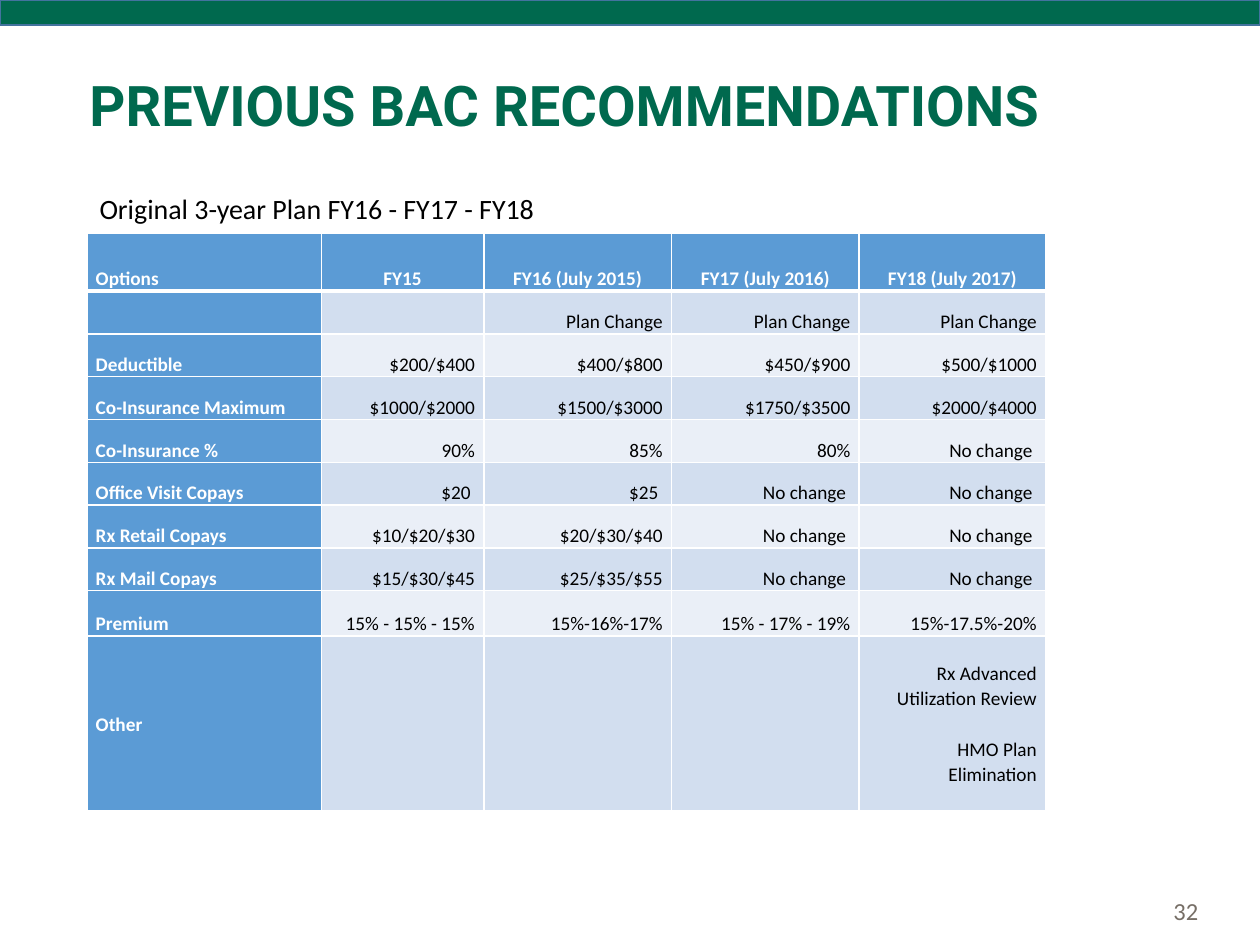
from typing import NamedTuple

from pptx import Presentation
from pptx import util as u
from pptx.dml.color import RGBColor
from pptx.enum import shapes, text
from pptx.oxml import ns, xmlchemy

GREEN = RGBColor(0x00, 0x69, 0x4E)
OUTLINE = RGBColor(0x43, 0x73, 0x9E)
BLUE = RGBColor(0x5B, 0x9B, 0xD5)
BANDS = (RGBColor(0xD2, 0xDE, 0xEF), RGBColor(0xEA, 0xEF, 0xF7))
WHITE = RGBColor(0xFF, 0xFF, 0xFF)
BLACK = RGBColor(0, 0, 0)
GREY = RGBColor(0x77, 0x6F, 0x67)

LEFT, CENTER, RIGHT = text.PP_ALIGN.LEFT, text.PP_ALIGN.CENTER, text.PP_ALIGN.RIGHT
BOTTOM, MIDDLE, TOP = (text.MSO_ANCHOR.BOTTOM, text.MSO_ANCHOR.MIDDLE,
                       text.MSO_ANCHOR.TOP)


class PlanRow(NamedTuple):
    label: str
    values: tuple
    height: float = 0.34
    anchor: text.MSO_ANCHOR = BOTTOM


HEADER = PlanRow("Options", ("FY15", "FY16 (July 2015)", "FY17 (July 2016)",
                             "FY18 (July 2017)"), 0.46)
PLAN_ROWS = (
    PlanRow("", ("", "Plan Change", "Plan Change", "Plan Change")),
    PlanRow("Deductible", ("$200/$400", "$400/$800", "$450/$900", "$500/$1000")),
    PlanRow("Co-Insurance Maximum",
            ("$1000/$2000", "$1500/$3000", "$1750/$3500", "$2000/$4000")),
    PlanRow("Co-Insurance %", ("90%", "85%", "80%", "No change ")),
    PlanRow("Office Visit Copays", ("$20 ", "$25 ", " No change ", "No change ")),
    PlanRow("Rx Retail Copays",
            ("$10/$20/$30", "$20/$30/$40", " No change ", " No change ")),
    PlanRow("Rx Mail Copays",
            ("$15/$30/$45", "$25/$35/$55", "No change ", " No change ")),
    PlanRow("Premium", ("15% - 15% - 15%", "15%-16%-17%", "15% - 17% - 19%",
                        "15%-17.5%-20%"), 0.36),
    PlanRow("Other", ("", "", "",
                      "Rx Advanced Utilization Review\nHMO Plan Elimination"),
            1.39, MIDDLE),
)
COLUMN_WIDTHS = (1.86, 1.29, 1.49, 1.49, 1.48)


def write(frame, content: str, *, size: float, color: RGBColor,
          font: str = "Calibri", bold: bool = False, align=LEFT,
          spacing: float = 1.0, gap: float = 0) -> None:
    """Fill a text frame, one paragraph per line, with a gap between them."""
    for index, line in enumerate(content.split("\n")):
        para = frame.add_paragraph() if index else frame.paragraphs[0]
        para.alignment = align
        para.line_spacing = spacing
        para.space_before = u.Pt(gap if index else 0)
        span = para.add_run()
        span.text = line
        span.font.name, span.font.size = font, u.Pt(size)
        span.font.bold, span.font.color.rgb = bold, color


def place(shape, left: float, top: float, width: float, height: float, anchor):
    """Position a text shape and return its frame."""
    shape.left, shape.top = u.Inches(left), u.Inches(top)
    shape.width, shape.height = u.Inches(width), u.Inches(height)
    frame = shape.text_frame
    frame.word_wrap = True
    frame.auto_size = text.MSO_AUTO_SIZE.NONE
    frame.vertical_anchor = anchor
    return frame


def add_borders(cell, top: float, bottom: float) -> None:
    properties = cell._tc.get_or_add_tcPr()
    for side, width in (("L", 1), ("R", 1), ("T", top), ("B", bottom)):
        line = xmlchemy.OxmlElement(f"a:ln{side}")
        line.set("w", str(u.Pt(width)))
        fill = xmlchemy.OxmlElement("a:solidFill")
        color = xmlchemy.OxmlElement("a:srgbClr")
        color.set("val", str(WHITE))
        fill.append(color)
        line.append(fill)
        properties.append(line)


def add_plan_table(page) -> None:
    rows = (HEADER,) + PLAN_ROWS
    table = page.shapes.add_table(
        len(rows), len(COLUMN_WIDTHS), u.Inches(0.69), u.Inches(1.85),
        u.Inches(sum(COLUMN_WIDTHS)), u.Inches(sum(r.height for r in rows))).table
    for column, width in zip(table.columns, COLUMN_WIDTHS):
        column.width = u.Inches(width)
    for number, row in enumerate(rows):
        table.rows[number].height = u.Inches(row.height)
        for position, content in enumerate((row.label,) + row.values):
            cell = table.cell(number, position)
            heading = number == 0 or position == 0
            add_borders(cell, 3 if number == 1 else 1, 3 if number == 0 else 1)
            cell.fill.solid()
            cell.fill.fore_color.rgb = BLUE if heading else BANDS[(number - 1) % 2]
            cell.margin_left = cell.margin_right = u.Inches(0.07)
            cell.margin_top = cell.margin_bottom = 0
            cell.vertical_anchor = row.anchor
            if content:
                align = LEFT if position == 0 else CENTER if number == 0 else RIGHT
                write(cell.text_frame, content, size=11, bold=heading,
                      color=WHITE if heading else BLACK, align=align,
                      spacing=1.07, gap=14.4)


def main() -> None:
    deck = Presentation()
    deck.slide_width, deck.slide_height = u.Inches(10), u.Inches(7.5)
    page = deck.slides.add_slide(deck.slide_layouts[1])

    # Top band
    band = page.shapes.add_shape(shapes.MSO_SHAPE.RECTANGLE, 0, 0,
                                 deck.slide_width, u.Inches(0.2))
    band.shadow.inherit = False
    band.fill.solid()
    band.fill.fore_color.rgb = GREEN
    band.line.color.rgb = OUTLINE
    band.line.width = u.Pt(1)

    # Page number
    number_box = page.shapes.add_textbox(0, 0, 0, 0)
    write(place(number_box, 6.61, 7.03, 3, 0.4, MIDDLE), "32",
          size=14, color=GREY, align=RIGHT)

    add_plan_table(page)

    # Table caption, without the template's bullet
    caption = place(page.placeholders[1], 0.69, 1.52, 8.62, 0.33, TOP)
    properties = caption.paragraphs[0]._p.get_or_add_pPr()
    properties.set("marL", "0")
    properties.set("indent", "0")
    properties.append(properties.makeelement(ns.qn("a:buNone"), {}))
    write(caption, "Original 3-year Plan FY16 - FY17 - FY18",
          size=16, color=BLACK, spacing=0.8)

    # Title
    write(place(page.shapes.title, 0.61, 0.4, 8.62, 0.92, MIDDLE),
          "PREVIOUS BAC RECOMMENDATIONS", size=32, color=GREEN,
          font="Roboto", bold=True, spacing=0.9)

    deck.save("out.pptx")


if __name__ == "__main__":
    main()
